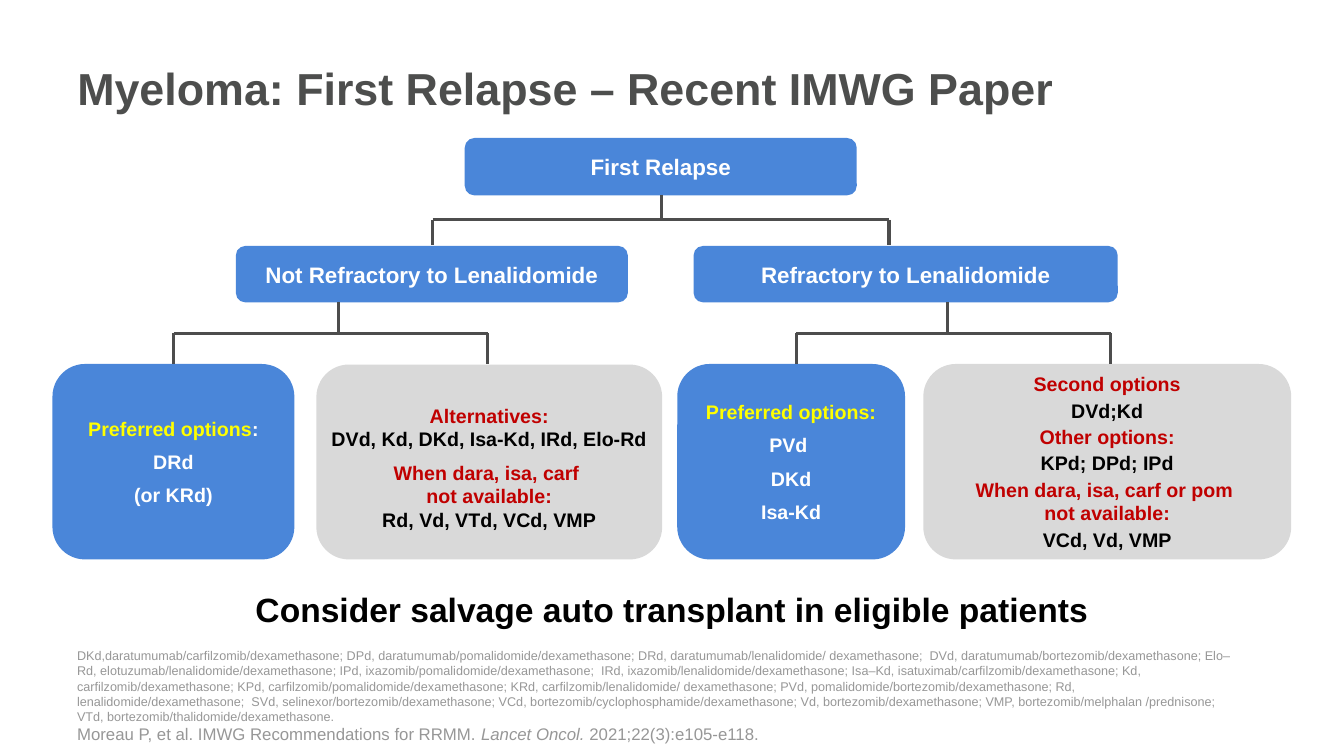
"""Build the slide on treatment options at first myeloma relapse."""
from dataclasses import dataclass

from lxml import etree
from pptx import Presentation
from pptx.dml.color import RGBColor
from pptx.enum.shapes import MSO_CONNECTOR, MSO_SHAPE
from pptx.enum.text import MSO_ANCHOR, MSO_AUTO_SIZE, PP_ALIGN
from pptx.oxml.ns import qn
from pptx.util import Pt

ROUNDED = MSO_SHAPE.ROUNDED_RECTANGLE
STRAIGHT = MSO_CONNECTOR.STRAIGHT
TOP, MIDDLE, BOTTOM = MSO_ANCHOR.TOP, MSO_ANCHOR.MIDDLE, MSO_ANCHOR.BOTTOM
LEFT, CENTER = PP_ALIGN.LEFT, PP_ALIGN.CENTER
NO_FIT = MSO_AUTO_SIZE.NONE


@dataclass(frozen=True)
class Theme:
    font: str = "Arial"
    blue: str = "4A86D9"
    grey: str = "D9D9D9"
    line: str = "4D4D4D"
    title: str = "4D4E4D"
    note: str = "979797"
    white: str = "FFFFFF"
    black: str = "000000"
    yellow: str = "FFFF00"
    red: str = "C00000"
    title_size: float = 32
    message_size: float = 24
    head_size: float = 16
    option_size: float = 14
    cite_size: float = 12
    note_size: float = 9


T = Theme()


@dataclass(frozen=True)
class Run:
    text: str
    color: str
    size: float = T.option_size
    bold: bool = True
    italic: bool = False


@dataclass(frozen=True)
class Box:
    left: float
    top: float
    width: float
    height: float
    fill: str
    paras: list[list[Run]]
    gap: float = 7
    inset_top: float = 0


@dataclass(frozen=True)
class Fork:
    stem: float
    top: float
    bar: float
    bottom: float
    left: float
    right: float


def head(text: str) -> list[list[Run]]:
    return [[Run(text, T.white, T.head_size)]]


BOXES = [
    Box(332, 98.6, 280, 41, T.blue, head("First Relapse")),
    Box(168.5, 175.7, 280, 40.3, T.blue, head("Not Refractory to Lenalidomide")),
    Box(495.4, 175.7, 303, 40.3, T.blue, head("Refractory to Lenalidomide")),
    Box(37.5, 260, 172.8, 139.6, T.blue, [
        [Run("Preferred options", T.yellow), Run(":", T.white)],
        [Run("DRd", T.white)],
        [Run("(or KRd)", T.white)],
    ]),
    Box(226, 260.4, 247, 139.2, T.grey, [
        [Run("Alternatives:\n", T.red),
         Run("DVd, Kd, DKd, Isa-Kd, IRd, Elo-Rd", T.black)],
        [Run("When dara, isa, carf \nnot available:\n", T.red),
         Run("Rd, Vd, VTd, VCd, VMP", T.black)],
    ], inset_top=8),
    Box(483.8, 260, 162.7, 139.6, T.blue, [
        [Run("Preferred options:", T.yellow)],
        [Run("PVd ", T.white)],
        [Run("DKd", T.white)],
        [Run("Isa-Kd", T.white)],
    ]),
    Box(659.5, 260, 262.8, 139.6, T.grey, [
        [Run("Second options", T.red)],
        [Run("DVd;Kd", T.black)],
        [Run("Other options:", T.red)],
        [Run("KPd; DPd; IPd", T.black)],
        [Run("When dara, isa, carf or pom \nnot available:", T.red)],
        [Run("VCd, Vd, VMP", T.black)],
    ], gap=2),
]

FORKS = [
    Fork(472.3, 139, 157, 175, 309, 635),
    Fork(242, 216, 238, 260, 124, 348.5),
    Fork(676.8, 216, 238, 260, 568.8, 793.4),
]

ABBREVIATIONS = (
    "DKd,daratumumab/carfilzomib/dexamethasone; "
    "DPd, daratumumab/pomalidomide/dexamethasone; "
    "DRd, daratumumab/lenalidomide/ dexamethasone;  "
    "DVd, daratumumab/bortezomib/dexamethasone; "
    "Elo–Rd, elotuzumab/lenalidomide/dexamethasone; "
    "IPd, ixazomib/pomalidomide/dexamethasone;  "
    "IRd, ixazomib/lenalidomide/dexamethasone; "
    "Isa–Kd, isatuximab/carfilzomib/dexamethasone; "
    "Kd, carfilzomib/dexamethasone; "
    "KPd, carfilzomib/pomalidomide/dexamethasone; "
    "KRd, carfilzomib/lenalidomide/ dexamethasone; "
    "PVd, pomalidomide/bortezomib/dexamethasone; "
    "Rd, lenalidomide/dexamethasone;  "
    "SVd, selinexor/bortezomib/dexamethasone; "
    "VCd, bortezomib/cyclophosphamide/dexamethasone; "
    "Vd, bortezomib/dexamethasone; "
    "VMP, bortezomib/melphalan /prednisone; "
    "VTd, bortezomib/thalidomide/dexamethasone."
)

FOOTNOTE = [
    [Run(ABBREVIATIONS, T.note, T.note_size, bold=False)],
    [Run("Moreau P, et al. IMWG Recommendations for RRMM. ",
         T.note, T.cite_size, bold=False),
     Run("Lancet Oncol. ", T.note, T.cite_size, bold=False, italic=True),
     Run("2021;22(3):e105-e118.", T.note, T.cite_size, bold=False)],
]


def write(tf, paras: list[list[Run]], *, align=LEFT, anchor=TOP,
          wrap: bool = True, gap: float = 0) -> None:
    tf.auto_size, tf.word_wrap, tf.vertical_anchor = NO_FIT, wrap, anchor
    for i, runs in enumerate(paras):
        p = tf.add_paragraph() if i else tf.paragraphs[0]
        p.alignment = align
        p.space_before = Pt(gap if i else 0)
        for run in runs:
            for j, line in enumerate(run.text.split("\n")):
                if j:
                    p.add_line_break()
                if line:
                    r = p.add_run()
                    r.text = line
                    r.font.name, r.font.size = T.font, Pt(run.size)
                    r.font.bold, r.font.italic = run.bold, run.italic
                    r.font.color.rgb = RGBColor.from_string(run.color)


def draw_box(s, box: Box) -> None:
    sp = s.shapes.add_shape(ROUNDED, Pt(box.left), Pt(box.top),
                            Pt(box.width), Pt(box.height))
    sp.shadow.inherit = False
    sp.fill.solid()
    sp.fill.fore_color.rgb = RGBColor.from_string(box.fill)
    sp.line.fill.background()
    tf = sp.text_frame
    tf.margin_left = tf.margin_right = tf.margin_bottom = 0
    tf.margin_top = Pt(box.inset_top)
    write(tf, box.paras, align=CENTER, anchor=MIDDLE, wrap=False, gap=box.gap)


def draw_fork(s, f: Fork) -> None:
    for x1, y1, x2, y2 in [(f.stem, f.top, f.stem, f.bar),
                           (f.left, f.bar, f.right, f.bar),
                           (f.left, f.bar, f.left, f.bottom),
                           (f.right, f.bar, f.right, f.bottom)]:
        c = s.shapes.add_connector(STRAIGHT, Pt(x1), Pt(y1), Pt(x2), Pt(y2))
        c.line.color.rgb = RGBColor.from_string(T.line)
        c.line.width = Pt(2.25)
        etree.SubElement(c._element.spPr, qn("a:effectLst"))


def main() -> None:
    prs = Presentation()
    prs.slide_width, prs.slide_height = Pt(960), Pt(540)
    s = prs.slides.add_slide(prs.slide_layouts[5])
    title = s.shapes.title
    title.left, title.top, title.width, title.height = Pt(48), Pt(16), Pt(846), Pt(93.6)
    write(title.text_frame, [[Run("Myeloma: First Relapse – Recent IMWG Paper",
                                  T.title, T.title_size)]], anchor=MIDDLE)
    for box in BOXES:
        draw_box(s, box)
    for fork in FORKS:
        draw_fork(s, fork)
    message = s.shapes.add_textbox(Pt(163.4), Pt(387.4), Pt(633), Pt(65.5))
    write(message.text_frame, [[Run("Consider salvage auto transplant in eligible patients",
                                    T.black, T.message_size)]],
          align=CENTER, anchor=BOTTOM)
    note = s.shapes.add_textbox(Pt(48), Pt(500.4), Pt(846), Pt(34.6))
    write(note.text_frame, FOOTNOTE, anchor=BOTTOM)
    prs.save("out.pptx")


if __name__ == "__main__":
    main()
